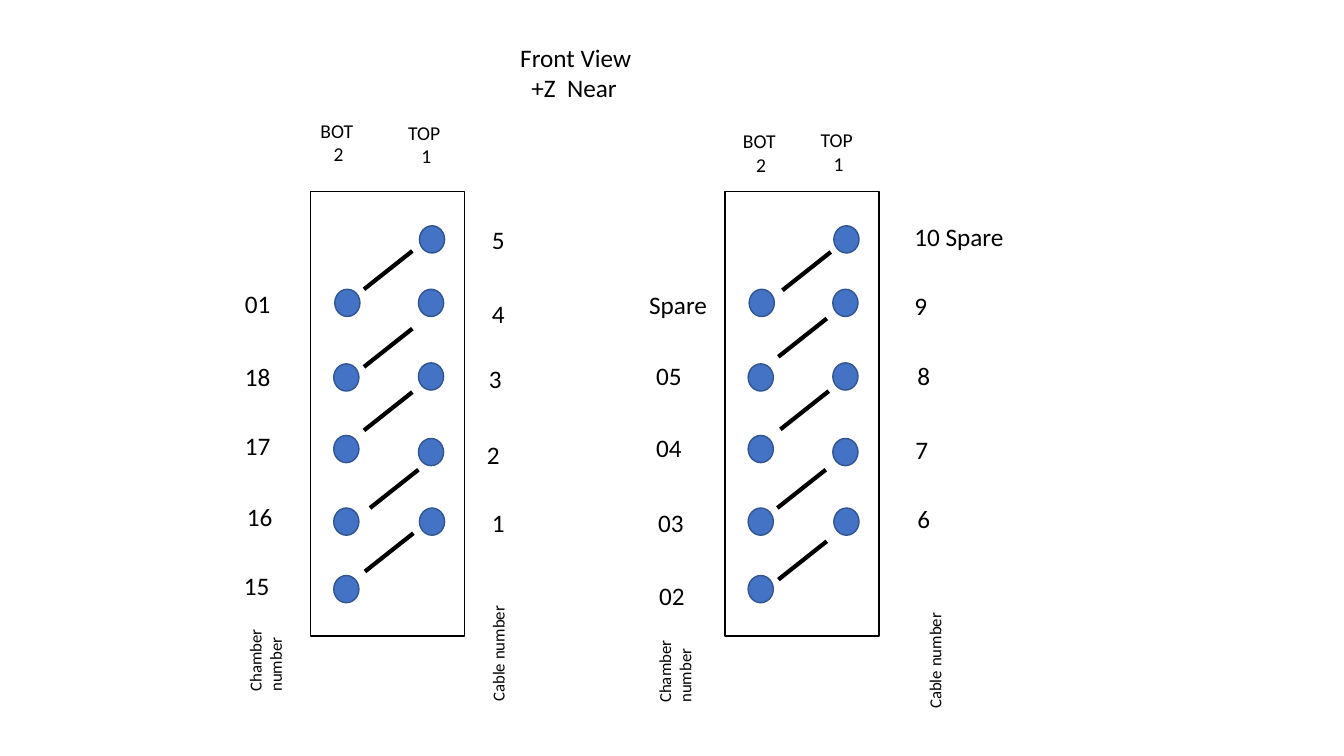
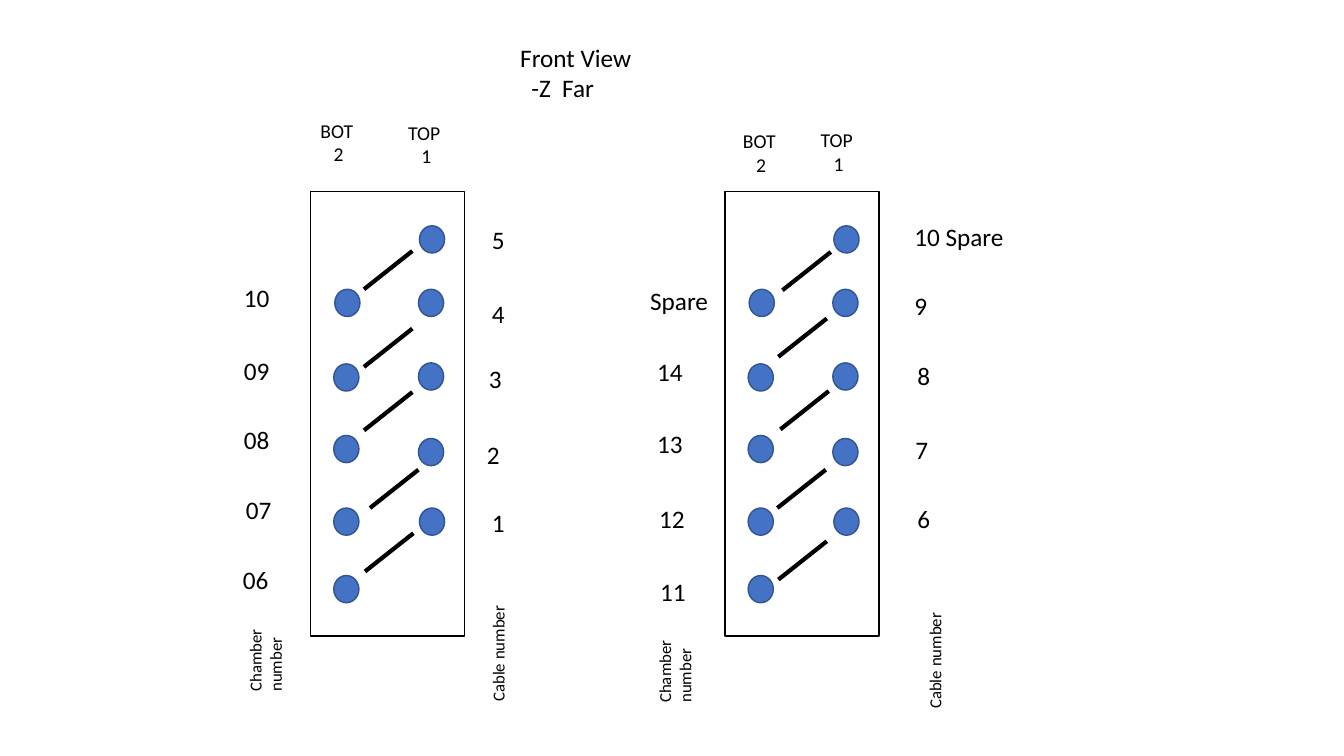
from dataclasses import dataclass

from lxml import etree
from pptx import Presentation
from pptx.dml.color import RGBColor
from pptx.enum.shapes import MSO_CONNECTOR, MSO_SHAPE
from pptx.enum.text import MSO_ANCHOR, MSO_AUTO_SIZE, PP_ALIGN
from pptx.oxml.ns import qn
from pptx.shapes.autoshape import Shape
from pptx.slide import Slide
from pptx.util import Pt

OVAL, RECT = MSO_SHAPE.OVAL, MSO_SHAPE.RECTANGLE
STRAIGHT = MSO_CONNECTOR.STRAIGHT
LEFT, TOP = PP_ALIGN.LEFT, MSO_ANCHOR.TOP
GROW = MSO_AUTO_SIZE.SHAPE_TO_FIT_TEXT

SCALE = 9144  # EMU per px, 100 px to the inch
FONT = "Calibri"
COLORS = {"ink": "000000", "dot": "4472C4", "edge": "325491"}
Point = tuple[int, int]
Box = tuple[int, int, int, int]

# Dot corners, x counted from the left edge of the board
DOTS = (
    (108, 224), (107, 287), (107, 360), (107, 435), (108, 504),
    (24, 287), (23, 361), (23, 432), (23, 504), (23, 571),
)
BOARD_Y, BOARD_W, BOARD_H = 190, 153, 441
DOT_W, DOT_H = 25, 27
LINK_W, LINK_H = 48, 38
HEAD_W, HEAD_H = 91, 57
MARK_H = 40
WIDTHS = {1: 33, 2: 46, 5: 78, 8: 110}  # label width by text length


@dataclass(frozen=True)
class Board:
    x: int
    bot: Point
    top: Point
    links: tuple[Point, ...]
    cables: tuple[str, ...]
    ports: tuple[Point, ...]
    rooms: tuple[Point, ...]
    cable: Point
    room: Point


@dataclass(frozen=True)
class View:
    title: str
    rooms: tuple[tuple[str, ...], ...]
    shifts: tuple[Point, ...]


BOARDS = (
    Board(
        x=308, bot=(308, 113), top=(395, 115),
        links=((409, 249), (409, 326), (409, 389), (415, 466), (410, 529)),
        cables=("5", "4", "3", "2", "1"),
        ports=((478, 218), (478, 291), (475, 356), (473, 431), (478, 498)),
        rooms=((233, 281), (233, 354), (233, 422), (235, 492), (232, 561)),
        cable=(433, 630), room=(219, 627),
    ),
    Board(
        x=719, bot=(727, 123), top=(804, 122),
        links=((824, 250), (820, 316), (822, 388), (819, 466), (820, 537)),
        cables=("10 Spare", "9", "8", "7", "6"),
        ports=((897, 215), (897, 283), (900, 353), (898, 426), (900, 494)),
        rooms=((634, 282), (641, 353), (641, 424), (643, 498), (644, 571)),
        cable=(866, 637), room=(625, 638),
    ),
)
VIEWS = (
    View("+Z  Near",
         (("01", "18", "17", "16", "15"), ("Spare", "05", "04", "03", "02")),
         ((0, 0), (0, 0))),
    View("-Z  Far",
         (("10", "09", "08", "07", "06"), ("Spare", "14", "13", "12", "11")),
         ((-1, -6), (1, -4))),
)


def px(size: int) -> int:
    return size * SCALE


def rgb(name: str) -> RGBColor:
    return RGBColor.from_string(COLORS[name])


def write(shape: Shape, lines: tuple[str, ...], size: int,
          wrap: bool = True, inset: int = 0) -> None:
    """Fill a shape with lines; those after the first start at the inset."""
    frame = shape.text_frame
    frame.word_wrap, frame.auto_size = wrap, GROW
    frame.vertical_anchor = TOP
    for row, text in enumerate(lines):
        para = frame.add_paragraph() if row else frame.paragraphs[0]
        para.alignment = LEFT
        if row:
            props = para._p.get_or_add_pPr()
            props.set("marL", str(px(inset)))
            props.set("indent", "0")
        run = para.add_run()
        run.text = text
        run.font.name, run.font.size = FONT, Pt(size)
        run.font.color.rgb = rgb("ink")


def label(slide: Slide, box: Box, lines: tuple[str, ...], size: int,
          wrap: bool = True, inset: int = 0, turn: int = 0) -> None:
    shape = slide.shapes.add_textbox(*map(px, box))
    shape.rotation = turn
    write(shape, lines, size, wrap, inset)


def mark(slide: Slide, spot: Point, text: str) -> None:
    label(slide, (*spot, WIDTHS[len(text)], MARK_H), (text,), 18, wrap=False)


def plate(slide: Slide, kind: MSO_SHAPE, box: Box, edge: str,
          fill: str | None = None) -> None:
    shape = slide.shapes.add_shape(kind, *map(px, box))
    shape.shadow.inherit = False
    if fill:
        shape.fill.solid()
        shape.fill.fore_color.rgb = rgb(fill)
    else:
        shape.fill.background()
    shape.line.color.rgb = rgb(edge)
    shape.line.width = Pt(1)


def link(slide: Slide, spot: Point) -> None:
    x, y = spot
    ends = (x, y, x - LINK_W, y + LINK_H)
    line = slide.shapes.add_connector(STRAIGHT, *map(px, ends))
    line.line.color.rgb = rgb("ink")
    line.line.width = Pt(3)
    etree.SubElement(line._element.spPr, qn("a:effectLst"))


def draw(slide: Slide, board: Board, rooms: tuple[str, ...],
         shift: Point) -> None:
    """Draw one board with its dots, links and labels."""
    plate(slide, RECT, (board.x, BOARD_Y, BOARD_W, BOARD_H), "ink")
    for x, y in DOTS:
        plate(slide, OVAL, (board.x + x, y, DOT_W, DOT_H), "edge", "dot")
    for spot in board.links:
        link(slide, spot)
    for spot, lines in ((board.bot, ("BOT", "2")), (board.top, ("TOP", "1"))):
        label(slide, (*spot, HEAD_W, HEAD_H), lines, 14, inset=13)
    for spot, text in zip(board.ports, board.cables):
        mark(slide, spot, text)
    for (x, y), text in zip(board.rooms, rooms):
        mark(slide, (x + shift[0], y + shift[1]), text)
    label(slide, (*board.cable, 122, 30), ("Cable number",), 12, turn=270)
    label(slide, (*board.room, 88, 50), ("Chamber number",), 12, turn=270)


def main() -> None:
    deck = Presentation()
    deck.slide_width, deck.slide_height = px(1333), px(750)
    layout = deck.slide_layouts.get_by_name("Title Only")
    for view in VIEWS:
        slide = deck.slides.add_slide(layout)
        title = slide.shapes.title
        title.left, title.top, title.width, title.height = map(
            px, (506, 37, 135, 71))
        write(title, ("Front View", view.title), 18, wrap=False, inset=11)
        for board, rooms, shift in zip(BOARDS, view.rooms, view.shifts):
            draw(slide, board, rooms, shift)
    deck.save("out.pptx")


if __name__ == "__main__":
    main()
